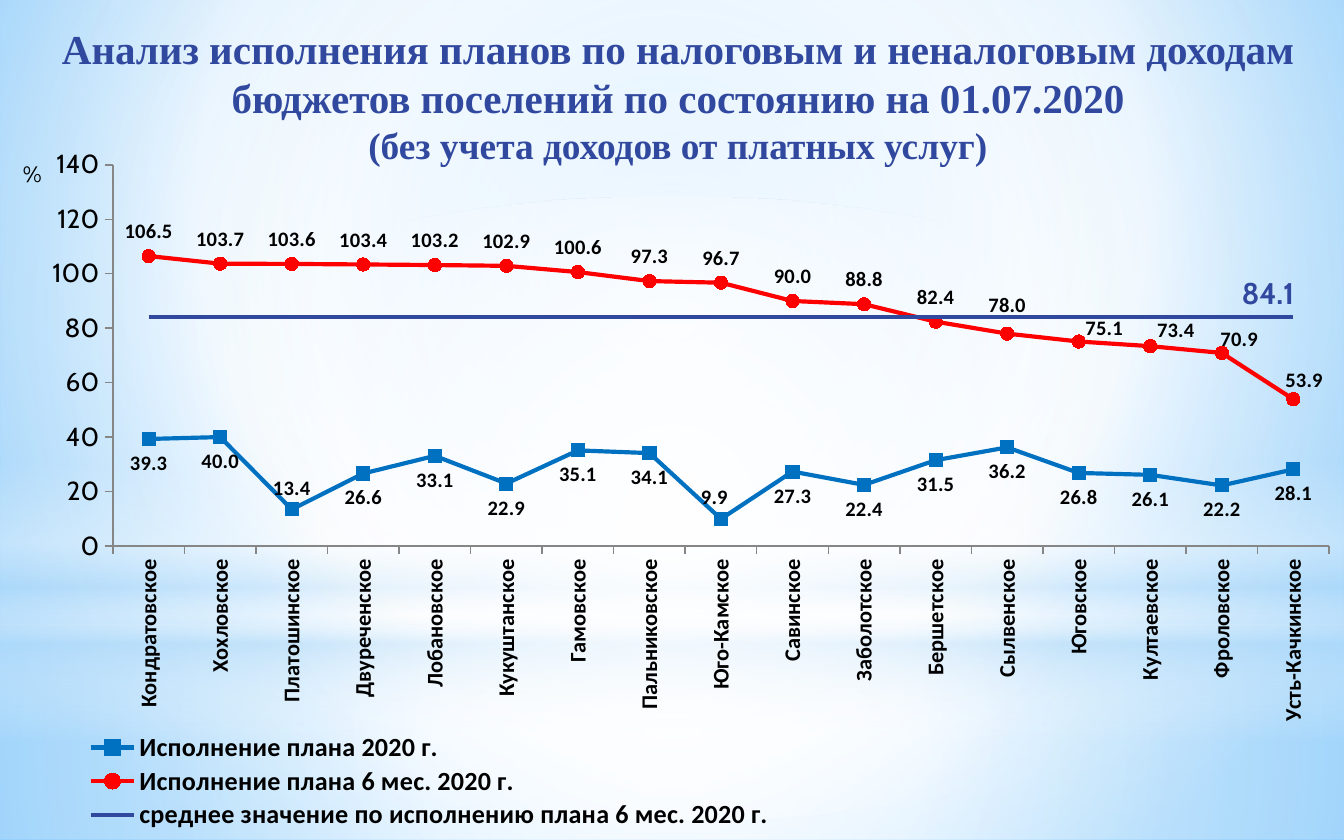
"""Build the slide on how settlement budgets met their revenue plans."""
from dataclasses import dataclass
from typing import Optional

from lxml.etree import SubElement
from pptx import Presentation
from pptx.chart.data import CategoryChartData
from pptx.dml.color import RGBColor as Rgb
from pptx.enum.chart import XL_CHART_TYPE as ChartType
from pptx.enum.chart import XL_LABEL_POSITION as LabelAt
from pptx.enum.chart import XL_LEGEND_POSITION as LegendAt
from pptx.enum.chart import XL_MARKER_STYLE as Marker
from pptx.enum.chart import XL_TICK_MARK as Tick
from pptx.enum.shapes import MSO_SHAPE as Preset
from pptx.enum.text import MSO_ANCHOR as Anchor
from pptx.enum.text import MSO_AUTO_SIZE as AutoSize
from pptx.enum.text import PP_ALIGN as Align
from pptx.oxml.ns import qn
from pptx.oxml.xmlchemy import BaseOxmlElement as Element
from pptx.oxml.xmlchemy import OxmlElement
from pptx.util import Inches, Pt

WIDTH, HEIGHT = Inches(10), Inches(6.25)
DECIMAL = "#,##0.0"


@dataclass(frozen=True)
class Theme:
    navy: str = "31489F"
    blue: str = "0070C0"
    red: str = "FF0000"
    black: str = "000000"
    axis: str = "868686"
    serif: str = "Times New Roman"
    sans: str = "Calibri"
    round: str = "Cabin"
    headline: int = 22
    subline: int = 20
    base: int = 18
    average: int = 16
    scale: int = 14
    category: int = 12
    value: int = 11


@dataclass(frozen=True)
class Stop:
    at: int
    color: str
    opacity: int = 100


@dataclass(frozen=True)
class Gradient:
    stops: tuple[Stop, ...]
    focus: Optional[tuple[int, int, int, int]] = (50, 50, 50, 50)


@dataclass(frozen=True)
class Glow:
    preset: Preset
    top: float
    height: float
    gradient: Gradient


@dataclass(frozen=True)
class Shift:
    point: int
    x: float = 0
    y: float = 0


@dataclass(frozen=True)
class Indicator:
    name: str
    values: tuple[float, ...]
    color: str
    marker: Marker
    label_at: LabelAt
    font: str
    size: int
    shifts: tuple[Shift, ...]
    label_all: bool = True
    label_color: str = "000000"


THEME = Theme()
BACKDROP = Gradient((Stop(0, "9ED5FF"), Stop(60, "FFFFFF"), Stop(100, "5BB9FF")), (20, 10, 20, 60))
GLOWS = (
    Glow(Preset.RECTANGLE, 0.744, 0.256, Gradient(
        (Stop(0, "FFFFFF", 91), Stop(37, "FFFFFF", 76), Stop(100, "B4DCFA", 79)))),
    Glow(Preset.RECTANGLE, 0, 0.744, Gradient(
        (Stop(0, "FFFFFF", 89), Stop(48, "FFFFFF", 62), Stop(100, "B4DCFA", 79)))),
    Glow(Preset.RECTANGLE, 0.549, 0.333, Gradient(
        (Stop(0, "FFFFFF", 0), Stop(29, "FFFFFF", 30), Stop(45, "B4DCFA", 40),
         Stop(55, "FFFFFF", 26), Stop(65, "B4DCFA", 60), Stop(100, "FFFFFF", 0)), None)),
    Glow(Preset.OVAL, 0.234, 0.744, Gradient((Stop(0, "FFFFFF"), Stop(56, "FFFFFF", 0)))),
)
HEADLINE = (
    ("Анализ исполнения планов по налоговым и неналоговым доходам "
     "бюджетов поселений по состоянию на 01.07.2020", THEME.headline),
    ("(без учета доходов от платных услуг)", THEME.subline),
)
SETTLEMENTS = (
    "Кондратовское", "Хохловское", "Платошинское", "Двуреченское", "Лобановское", "Кукуштанское",
    "Гамовское", "Пальниковское", "Юго-Камское", "Савинское", "Заболотское", "Бершетское",
    "Сылвенское", "Юговское", "Култаевское", "Фроловское", "Усть-Качкинское",
)
INDICATORS = (
    Indicator("Исполнение плана 2020 г.",
              (39.3, 40, 13.4, 26.6, 33.1, 22.9, 35.1, 34.1, 9.9,
               27.3, 22.4, 31.5, 36.2, 26.8, 26.1, 22.2, 28.1),
              THEME.blue, Marker.SQUARE, LabelAt.BELOW, THEME.sans, THEME.value,
              (Shift(2, 0, -0.06), Shift(8, -0.005, -0.06))),
    Indicator("Исполнение плана 6 мес. 2020 г.",
              (106.5, 103.7, 103.6, 103.4, 103.2, 102.9, 100.6, 97.3, 96.7,
               90, 88.8, 82.4, 78, 75.1, 73.4, 70.9, 53.9),
              THEME.red, Marker.CIRCLE, LabelAt.ABOVE, THEME.sans, THEME.value,
              (Shift(12, 0, -0.005), Shift(13, 0.019, 0.015), Shift(14, 0.019, 0.011),
               Shift(15, 0.013, 0.015), Shift(16, 0.008, 0.008))),
    Indicator("среднее значение по исполнению плана 6 мес. 2020 г.", (84.1,) * len(SETTLEMENTS),
              THEME.navy, Marker.NONE, LabelAt.ABOVE, THEME.round, THEME.average,
              (Shift(16, -0.019),), False, THEME.navy),
)


def style(font, face: str, size: int, color: str = THEME.black, bold: bool = True) -> None:
    """Set the typeface, size, colour and weight of a font."""
    font.name, font.size, font.bold = face, Pt(size), bold
    font.color.rgb = Rgb.from_string(color)


def paint(owner: Element, gradient: Gradient) -> None:
    """Fill in the gradient element found inside the owner."""
    fill = owner.find(".//" + qn("a:gradFill"))
    for part in list(fill):
        fill.remove(part)
    stops = SubElement(fill, qn("a:gsLst"))
    for stop in gradient.stops:
        mark = SubElement(stops, qn("a:gs"), pos=str(stop.at * 1000))
        tint = SubElement(mark, qn("a:srgbClr"), val=stop.color)
        if stop.opacity < 100:
            SubElement(tint, qn("a:alpha"), val=str(stop.opacity * 1000))
    if gradient.focus is None:
        SubElement(fill, qn("a:lin"), ang="5400000", scaled="0")
        return
    path = SubElement(fill, qn("a:path"), path="circle")
    sides = {side: str(share * 1000) for side, share in zip("ltrb", gradient.focus)}
    SubElement(path, qn("a:fillToRect"), **sides)


def arrange(owner: Element, index: int, settings: dict[str, object]) -> None:
    """Give a chart part a manual layout."""
    for old in owner.findall(qn("c:layout")):
        owner.remove(old)
    layout = OxmlElement("c:layout")
    manual = SubElement(layout, qn("c:manualLayout"))
    for key, value in settings.items():
        SubElement(manual, qn(f"c:{key}"), val=str(value))
    owner.insert(index, layout)


def add_glow(slide, glow: Glow) -> None:
    """Draw one full-width band of light."""
    shape = slide.shapes.add_shape(
        glow.preset, 0, int(HEIGHT * glow.top), WIDTH, int(HEIGHT * glow.height))
    shape.shadow.inherit = False
    shape.line.fill.background()
    shape.fill.gradient()
    paint(shape.element, glow.gradient)


def write_title(title) -> None:
    """Place the title in front of the glows and fill it run by run."""
    title.element.getparent().append(title.element)
    title.left, title.top = int(WIDTH * 0.02), int(HEIGHT * 0.02)
    title.width, title.height = int(WIDTH * 0.969), int(HEIGHT * 0.155)
    frame = title.text_frame
    frame.word_wrap, frame.auto_size, frame.vertical_anchor = True, AutoSize.NONE, Anchor.TOP
    paragraph = frame.paragraphs[0]
    paragraph.alignment = Align.CENTER
    for order, (wording, size) in enumerate(HEADLINE):
        if order:
            paragraph.add_line_break()
        run = paragraph.add_run()
        run.text = wording
        style(run.font, THEME.serif, size, THEME.navy)


def format_series(series, indicator: Indicator) -> None:
    """Format the line, markers and labels of one indicator."""
    color = Rgb.from_string(indicator.color)
    series.smooth = False
    series.format.line.width = Pt(2.25)
    series.format.line.color.rgb = color
    series.marker.style = indicator.marker
    if indicator.marker is not Marker.NONE:
        series.marker.size = 7
        for fill in (series.marker.format.fill, series.marker.format.line.fill):
            fill.solid()
            fill.fore_color.rgb = color
    labels = series.data_labels
    labels.show_value = indicator.label_all
    labels.number_format, labels.number_format_is_linked = DECIMAL, False
    labels.position = indicator.label_at
    style(labels.font, indicator.font, indicator.size, indicator.label_color)
    for shift in indicator.shifts:
        label = series.points[shift.point].data_label
        style(label.font, indicator.font, indicator.size, indicator.label_color)
        label.position = indicator.label_at
    for entry, shift in zip(series.data_labels.element.findall(qn("c:dLbl"))
                            if hasattr(series.data_labels, "element")
                            else series.format.line.fill and
                            series.points[0].data_label and
                            series_element(series).findall(".//" + qn("c:dLbl")),
                            indicator.shifts):
        arrange(entry, 1, {"x": shift.x, "y": shift.y})
        number = OxmlElement("c:numFmt")
        number.set("formatCode", DECIMAL)
        number.set("sourceLinked", "0")
        entry.insert(2, number)


def series_element(series) -> Element:
    """Return the chart element behind a series."""
    return series.element if hasattr(series, "element") else series._element


def format_axes(chart) -> None:
    """Format the settlement axis and the percentage axis."""
    settlements, percent = chart.category_axis, chart.value_axis
    for axis in (settlements, percent):
        axis.has_major_gridlines = False
        axis.major_tick_mark, axis.minor_tick_mark = Tick.OUTSIDE, Tick.NONE
        axis.format.line.color.rgb = Rgb.from_string(THEME.axis)
    style(settlements.tick_labels.font, THEME.sans, THEME.category)
    percent.minimum_scale, percent.maximum_scale, percent.major_unit = 0, 140, 20
    percent.tick_labels.number_format = "#,##0"
    percent.tick_labels.number_format_is_linked = False
    style(percent.tick_labels.font, THEME.round, THEME.scale, bold=False)
    unit = percent.axis_title.text_frame.paragraphs[0].add_run()
    unit.text = "%"
    style(unit.font, THEME.round, THEME.category, bold=False)
    root = chart.element if hasattr(chart, "element") else chart._chartSpace
    turned = root.find(".//" + qn("c:catAx")).find(qn("c:txPr")).find(qn("a:bodyPr"))
    turned.set("rot", "-5400000")
    turned.set("vert", "horz")
    heading = root.find(".//" + qn("c:valAx")).find(qn("c:title"))
    heading.find(".//" + qn("a:bodyPr")).set("rot", "0")
    edges = {"xMode": "edge", "yMode": "edge"}
    arrange(heading, 1, edges | {"x": 0.014, "y": 0.095})
    arrange(root.find(".//" + qn("c:plotArea")), 0, {"layoutTarget": "inner"} | edges
            | {"x": 0.084, "y": 0.109, "w": 0.905, "h": 0.503})
    arrange(root.find(".//" + qn("c:legend")), 1, edges
            | {"x": 0.05, "y": 0.855, "w": 0.54, "h": 0.135})


def add_line_chart(slide) -> None:
    """Chart plan fulfilment by settlement."""
    figures = CategoryChartData(number_format=DECIMAL)
    figures.categories = SETTLEMENTS
    for indicator in INDICATORS:
        figures.add_series(indicator.name, indicator.values)
    chart = slide.shapes.add_chart(ChartType.LINE_MARKERS, 0, int(HEIGHT * 0.098), WIDTH,
                                   int(HEIGHT * 0.902), figures).chart
    style(chart.font, THEME.round, THEME.base, bold=False)
    chart.has_title = False
    chart.has_legend = True
    chart.legend.position, chart.legend.include_in_layout = LegendAt.BOTTOM, False
    style(chart.legend.font, THEME.sans, THEME.scale)
    chart.plots[0].vary_by_categories = False
    for series, indicator in zip(chart.plots[0].series, INDICATORS):
        format_series(series, indicator)
    format_axes(chart)


def main() -> None:
    """Build and save the slide."""
    deck = Presentation()
    deck.slide_width, deck.slide_height = WIDTH, HEIGHT
    slide = deck.slides.add_slide(deck.slide_layouts[5])
    slide.background.fill.gradient()
    paint(slide.element, BACKDROP)
    for glow in GLOWS:
        add_glow(slide, glow)
    write_title(slide.shapes.title)
    add_line_chart(slide)
    deck.save("out.pptx")


if __name__ == "__main__":
    main()
